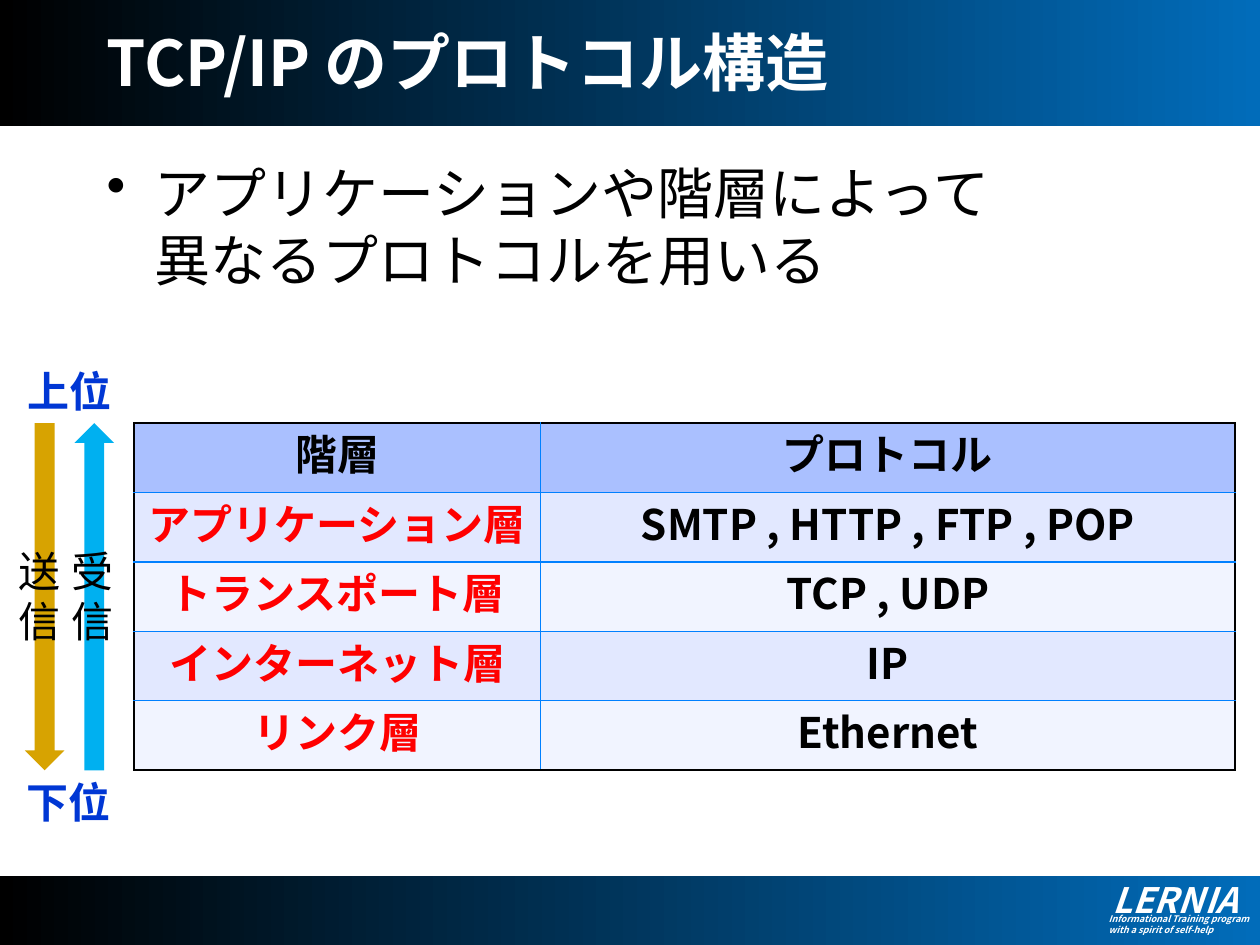
from lxml import etree
from pptx import Presentation
from pptx.dml.color import RGBColor
from pptx.enum.shapes import MSO_SHAPE
from pptx.enum.text import MSO_ANCHOR, PP_ALIGN
from pptx.oxml.ns import qn
from pptx.util import Cm, Pt

RECTANGLE = MSO_SHAPE.RECTANGLE
DOWN_ARROW, UP_ARROW = MSO_SHAPE.DOWN_ARROW, MSO_SHAPE.UP_ARROW
TOP, MIDDLE = MSO_ANCHOR.TOP, MSO_ANCHOR.MIDDLE
LEFT, CENTER = PP_ALIGN.LEFT, PP_ALIGN.CENTER
BLACK, WHITE, RED, BLUE = "000000", "FFFFFF", "FF0000", "0037D4"
BAND_END, GRID = "016CBA", "0080FF"
HEADER_FILL, ROW_FILLS = "AAC0FF", ("E2E8FF", "F1F4FF")

LAYERS = [
    ("階層", "プロトコル"),
    ("アプリケーション層", "SMTP , HTTP , FTP , POP"),
    ("トランスポート層", "TCP , UDP"),
    ("インターネット層", "IP"),
    ("リンク層", "Ethernet"),
]


def color(value):
    return RGBColor.from_string(value)


class SlidePainter:
    """Holds the text style and the slide being built."""

    def __init__(self, slide, font="Noto Sans CJK JP", line_factor=1.2):
        self.slide = slide
        self.font = font
        self.line_factor = line_factor

    def fill_para(self, para, text, size, ink, bold=False, italic=False, align=LEFT):
        para.alignment = align
        para.line_spacing = Pt(round(size * self.line_factor, 2))
        for index, line in enumerate(text.split("\n")):
            if index:
                para.add_line_break()
            span = para.add_run()
            span.text = line
            span.font.name = self.font
            span.font.size = Pt(size)
            span.font.bold = bold
            span.font.italic = italic
            span.font.color.rgb = color(ink)
            latin = span.font._element.find(qn("a:latin"))
            east_asian = etree.Element(qn("a:ea"), typeface=self.font)
            latin.addnext(east_asian)

    def shape(self, kind, left, top, width, height):
        shape = self.slide.shapes.add_shape(
            kind, Cm(left), Cm(top), Cm(width), Cm(height))
        shape.shadow.inherit = False
        shape.line.fill.background()
        return shape

    def band(self, top, height):
        fill = self.shape(RECTANGLE, 0, top, 25.4, height).fill
        fill.gradient()
        fill.gradient_angle = 0
        for stop, value in zip(fill.gradient_stops, (BLACK, BAND_END)):
            stop.color.rgb = color(value)

    def arrow(self, kind, left, top, width, height, value):
        fill = self.shape(kind, left, top, width, height).fill
        fill.solid()
        fill.fore_color.rgb = color(value)

    def text(self, left, top, width, height, lines, size, ink,
             anchor=TOP, wrap=True, **style):
        box = self.slide.shapes.add_textbox(
            Cm(left), Cm(top), Cm(width), Cm(height))
        frame = box.text_frame
        frame.word_wrap = wrap
        frame.vertical_anchor = anchor
        for index, line in enumerate(lines):
            para = frame.add_paragraph() if index else frame.paragraphs[0]
            self.fill_para(para, line, size, ink, **style)
        return frame

    def bullet(self, para, indent):
        properties = para._p.get_or_add_pPr()
        properties.set("marL", str(Cm(indent)))
        properties.set("indent", str(-Cm(indent)))
        etree.SubElement(properties, qn("a:buChar"), char="•")

    def border(self, cell, side, value):
        line = etree.SubElement(
            cell._tc.get_or_add_tcPr(), qn(f"a:ln{side}"), w=str(Pt(1)))
        fill = etree.SubElement(line, qn("a:solidFill"))
        etree.SubElement(fill, qn("a:srgbClr"), val=value)

    def table(self, left, top, widths, row_height, rows, size):
        last_row, last_column = len(rows) - 1, len(widths) - 1
        table = self.slide.shapes.add_table(
            len(rows), len(widths), Cm(left), Cm(top),
            Cm(sum(widths)), Cm(row_height * len(rows))).table
        table.first_row = table.horz_banding = False
        for column, width in zip(table.columns, widths):
            column.width = Cm(width)
        for r, texts in enumerate(rows):
            table.rows[r].height = Cm(row_height)
            for c, text in enumerate(texts):
                cell = table.cell(r, c)
                cell.vertical_anchor = MIDDLE
                edges = {"L": c == 0, "R": c == last_column,
                         "T": r == 0, "B": r == last_row}
                for side, outer in edges.items():
                    self.border(cell, side, BLACK if outer else GRID)
                cell.fill.solid()
                cell.fill.fore_color.rgb = color(
                    ROW_FILLS[(r - 1) % 2] if r else HEADER_FILL)
                ink = RED if r and c == 0 else BLACK
                self.fill_para(cell.text_frame.paragraphs[0], text, size, ink,
                               bold=True, align=CENTER)


def main():
    deck = Presentation()
    deck.slide_width, deck.slide_height = Cm(25.4), Cm(19.05)
    page = SlidePainter(deck.slides.add_slide(deck.slide_layouts[6]))

    page.band(0, 2.54)
    page.band(17.65, 1.4)
    page.text(22.17, 17.58, 3.12, 1.12, ["LERNIA"], 20, WHITE,
              wrap=False, bold=True, italic=True)
    page.text(22.1, 18.29, 3.45, 0.71,
              ["Informational Training program", "with a spirit of self-help"],
              5.2, WHITE, wrap=False, bold=True, italic=True)

    page.text(1.9, 0.28, 21.6, 1.93, ["TCP/IP のプロトコル構造"], 36, WHITE,
              anchor=MIDDLE, bold=True)
    body = page.text(1.9, 3.07, 21.6, 3.05,
                     ["アプリケーションや階層によって\n異なるプロトコルを用いる"],
                     32, BLACK)
    page.bullet(body.paragraphs[0], 0.96)

    table_top, row_height = 8.53, 1.4
    page.table(2.7, table_top, (8.2, 14), row_height, LAYERS, 24)

    arrow_height = row_height * len(LAYERS)
    directions = [
        (DOWN_ARROW, 0.5, "D7A301", 0.13, "送信"),
        (UP_ARROW, 1.5, "00B0F0", 1.19, "受信"),
    ]
    for kind, left, value, label_left, label in directions:
        page.arrow(kind, left, table_top, 0.8, arrow_height, value)
        page.text(label_left, 10.87, 1.4, 2.31, [label], 24, BLACK)
    for left, top, label in ((0.3, 7.24, "上位"), (0.28, 15.52, "下位")):
        page.text(left, top, 2.4, 1.27, [label], 24, BLUE, bold=True)

    deck.save("out.pptx")


if __name__ == "__main__":
    main()
